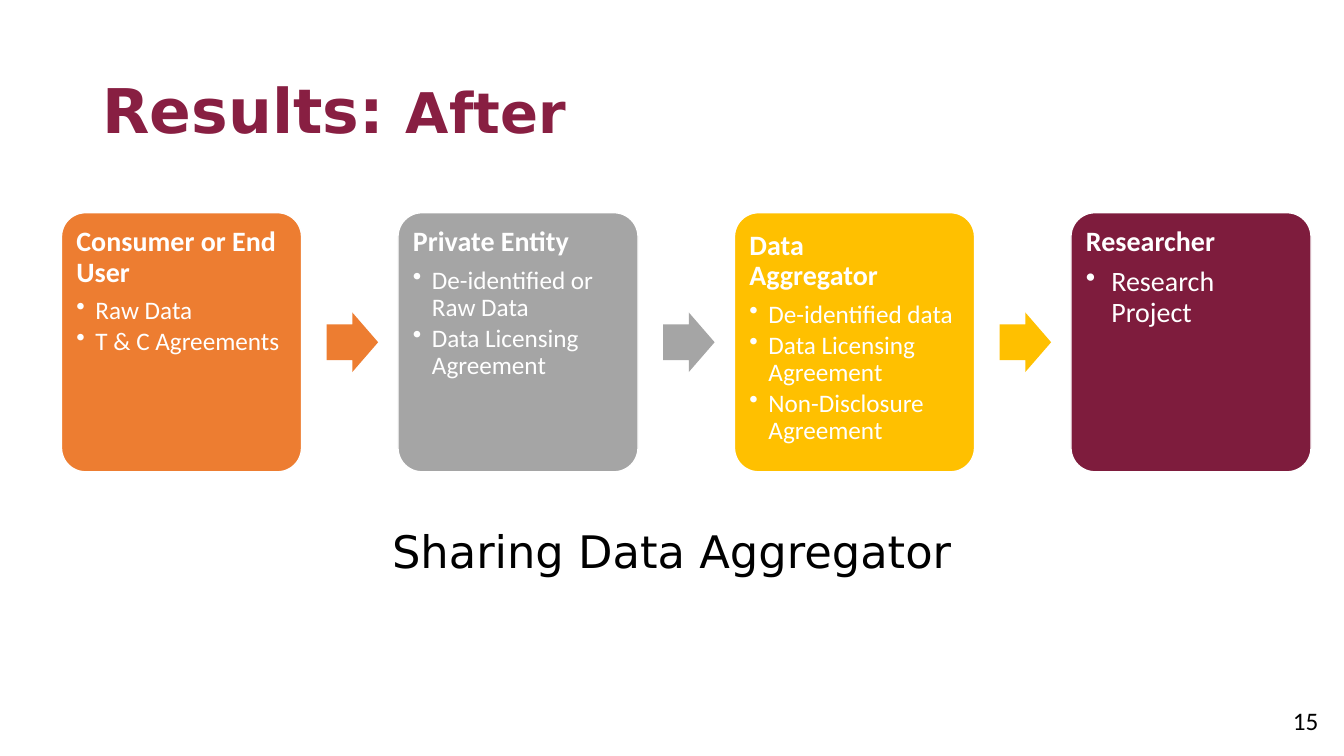
"""Build the slide that shows data shared through an aggregator."""
from dataclasses import dataclass

from lxml import etree
from pptx import Presentation
from pptx.dml.color import RGBColor
from pptx.enum.shapes import MSO_SHAPE
from pptx.enum.text import MSO_ANCHOR, PP_ALIGN
from pptx.oxml.ns import qn
from pptx.util import Cm, Pt

ROUND, ARROW = MSO_SHAPE.ROUNDED_RECTANGLE, MSO_SHAPE.RIGHT_ARROW
TOP, MIDDLE = MSO_ANCHOR.TOP, MSO_ANCHOR.MIDDLE
LEFT, CENTER = PP_ALIGN.LEFT, PP_ALIGN.CENTER

TITLE = [("Results: ", 44), ("After", 40)]
CAPTION = "Sharing Data Aggregator"
NUMBER = "15"
STEPS = [
    ("ED7D31", ["Consumer or End User"], ["Raw Data", "T & C Agreements"], 18, 0.48),
    ("A5A5A5", ["Private Entity"],
     ["De-identified or Raw Data", "Data Licensing Agreement"], 18, 0.48),
    ("FFC000", ["Data", "Aggregator"],
     ["De-identified data", "Data Licensing Agreement", "Non-Disclosure Agreement"],
     18, 0.48),
    ("7E1C3D", ["Researcher"], ["Research Project"], 20, 0.64),
]


@dataclass(frozen=True)
class Theme:
    """Hold the colours, fonts and type sizes."""
    title: str = "881F42"
    ink: str = "000000"
    white: str = "FFFFFF"
    display: str = "DejaVu Sans"
    text: str = "Calibri"
    head: int = 20
    caption: int = 32
    number: int = 18


THEME = Theme()
WIDE, HIGH = 33.87, 19.05
CARD_X, CARD_Y, CARD_W, CARD_H = 1.55, 5.36, 6.05, 6.53
PITCH = 8.48
ARROW_W, ARROW_H, ARROW_GAP = 1.3, 1.5, 0.63
INSET = 0.2
BODY_X, BODY_W = 2.33, 29.21


def style(run, font, size, color, bold=False):
    """Format one run."""
    run.font.name, run.font.size, run.font.bold = font, Pt(size), bold
    run.font.color.rgb = RGBColor.from_string(color)


def add_form(slide, kind, box, color):
    """Add a filled shape without shadow or line."""
    form = slide.shapes.add_shape(kind, *map(Cm, box))
    form.shadow.inherit = False
    form.fill.solid()
    form.fill.fore_color.rgb = RGBColor.from_string(color)
    form.line.fill.background()
    return form


def add_label(slide, box, text, font, size, align=LEFT):
    """Add a plain text box of one line."""
    frame = slide.shapes.add_textbox(*map(Cm, box)).text_frame
    frame.word_wrap = True
    frame.text = text
    line = frame.paragraphs[0]
    line.alignment = align
    style(line.runs[0], font, size, THEME.ink)
    return line


def add_bullet(line, indent):
    """Give a paragraph a round bullet and a hanging indent."""
    line.level = 1
    props = line._p.get_or_add_pPr()
    props.set("marL", str(Cm(indent)))
    props.set("indent", str(-Cm(indent)))
    etree.SubElement(props, qn("a:buChar")).set("char", "•")


def add_card(slide, x, color, heads, items, size, indent):
    """Add a rounded card with its heading and bullets."""
    card = add_form(slide, ROUND, (x, CARD_Y, CARD_W, CARD_H), color)
    card.adjustments[0] = 0.1
    card.line.color.rgb = RGBColor.from_string(THEME.white)
    card.line.width = Pt(1)
    frame = card.text_frame
    frame.word_wrap = True
    frame.vertical_anchor = TOP
    frame.margin_left = frame.margin_right = Cm(INSET)
    frame.margin_top = frame.margin_bottom = Cm(INSET)
    frame.text = "\n".join(heads + items)
    last = len(heads) - 1
    for row, line in enumerate(frame.paragraphs):
        line.alignment = LEFT
        line.line_spacing = 1.0 if row < last else 0.9
        if row > last:
            add_bullet(line, indent)
            line.space_after = Pt(0.15 * size)
        elif row == last:
            line.space_after = Pt(0.35 * THEME.head)
        kind = (THEME.head, True) if row <= last else (size, False)
        style(line.runs[0], THEME.text, kind[0], THEME.white, kind[1])


def add_title(slide):
    """Place the title and format its two sizes."""
    title = slide.shapes.title
    title.left, title.top, title.width, title.height = map(
        Cm, (BODY_X, 1.01, BODY_W, 3.68))
    title.text_frame.vertical_anchor = MIDDLE
    line = title.text_frame.paragraphs[0]
    line.alignment, line.line_spacing = LEFT, 0.9
    for text, size in TITLE:
        run = line.add_run()
        run.text = text
        style(run, THEME.display, size, THEME.title, True)


def main():
    """Build and save the slide."""
    deck = Presentation()
    deck.slide_width, deck.slide_height = Cm(WIDE), Cm(HIGH)
    slide = deck.slides.add_slide(deck.slide_layouts[5])
    add_title(slide)
    for rank, (color, *content) in enumerate(STEPS):
        x = CARD_X + rank * PITCH
        add_card(slide, x, color, *content)
        if rank < len(STEPS) - 1:
            box = (x + CARD_W + ARROW_GAP, CARD_Y + (CARD_H - ARROW_H) / 2,
                   ARROW_W, ARROW_H)
            arrow = add_form(slide, ARROW, box, color)
            arrow.adjustments[0], arrow.adjustments[1] = 0.6, 0.5
    line = add_label(slide, (BODY_X, 13.23, BODY_W, 3.15), CAPTION,
                     THEME.display, THEME.caption, CENTER)
    line.line_spacing = 0.9
    add_label(slide, (32.33, 17.65, 1.53, 1.02), NUMBER, THEME.text, THEME.number)
    deck.save("out.pptx")


if __name__ == "__main__":
    main()
